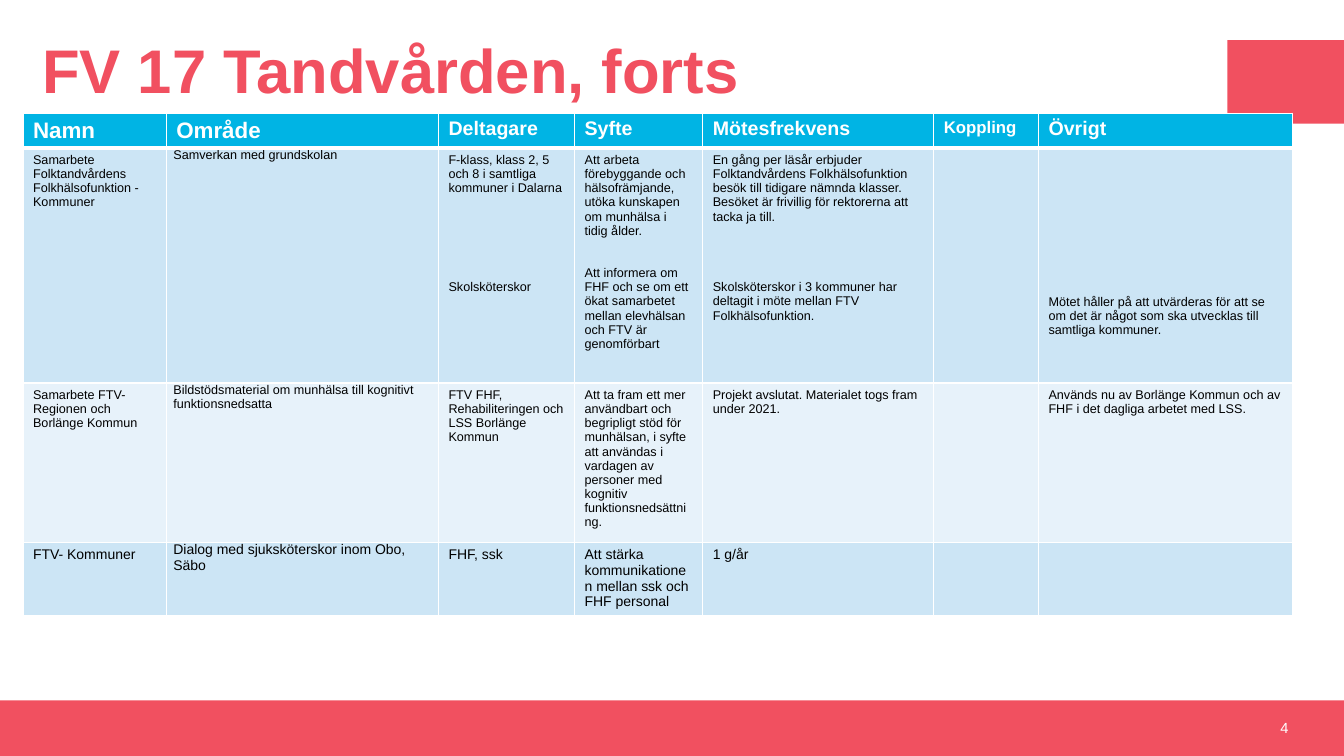
from lxml import etree
from pptx import Presentation
from pptx.dml.color import RGBColor
from pptx.enum.shapes import MSO_SHAPE
from pptx.enum.text import MSO_ANCHOR, MSO_AUTO_SIZE, PP_ALIGN
from pptx.oxml.ns import qn
from pptx.util import Cm, Pt

RECTANGLE = MSO_SHAPE.RECTANGLE
MIDDLE = MSO_ANCHOR.MIDDLE
NO_FIT = MSO_AUTO_SIZE.NONE
LEFT, RIGHT = PP_ALIGN.LEFT, PP_ALIGN.RIGHT

# Content
TITLE = "FV 17 Tandvården, forts"
PAGE_NUMBER = "4"
HEADERS = [("Namn", 16), ("Område", 16), ("Deltagare", 14), ("Syfte", 14),
           ("Mötesfrekvens", 14), ("Koppling", 12), ("Övrigt", 14)]
# Each cell lists (lines skipped above, text)
GROUPS = [
    [[(0, "Samarbete Folktandvårdens Folkhälsofunktion - Kommuner")],
     [(0, "Samverkan med grundskolan")],
     [(0, "F-klass, klass 2, 5 och 8 i samtliga kommuner i Dalarna"),
      (6, "Skolsköterskor")],
     [(0, "Att arbeta förebyggande och hälsofrämjande, utöka kunskapen om "
          "munhälsa i tidig ålder."),
      (2, "Att informera om FHF och se om ett ökat samarbetet mellan "
          "elevhälsan och FTV är genomförbart")],
     [(0, "En gång per läsår erbjuder Folktandvårdens Folkhälsofunktion besök "
          "till tidigare nämnda klasser. Besöket är frivillig för rektorerna "
          "att tacka ja till."),
      (4, "Skolsköterskor i 3 kommuner har deltagit i möte mellan FTV "
          "Folkhälsofunktion.")],
     [],
     [(10, "Mötet håller på att utvärderas för att se om det är något som ska "
           "utvecklas till samtliga kommuner.")]],
    [[(0, "Samarbete FTV- Regionen och Borlänge Kommun")],
     [(0, "Bildstödsmaterial om munhälsa till kognitivt funktionsnedsatta")],
     [(0, "FTV FHF, Rehabiliteringen och LSS Borlänge Kommun")],
     [(0, "Att ta fram ett mer användbart och begripligt stöd för munhälsan, i "
          "syfte att användas i vardagen av personer med kognitiv "
          "funktionsnedsättning.")],
     [(0, "Projekt avslutat. Materialet togs fram under 2021.")],
     [],
     [(0, "Används nu av Borlänge Kommun och av FHF i det dagliga arbetet med "
          "LSS.")]],
    [[(0, "FTV- Kommuner")],
     [(0, "Dialog med sjuksköterskor inom Obo, Säbo")],
     [(0, "FHF, ssk")],
     [(0, "Att stärka kommunikationen mellan ssk och FHF personal")],
     [(0, "1 g/år")],
     [], []],
]
GROUP_SIZES = [9, 9, 10]
AREA_COLUMN = 1

# Look
FONT = "Arial"
CORAL, WHITE, BLACK = "F15060", "FFFFFF", "000000"
HEADER_FILL = "00B4E4"
BANDS = ["CCE5F5", "E7F2FA"]
SLIDE_WIDTH, SLIDE_HEIGHT = 33.87, 19.05
FOOTER_TOP = 17.65
COLUMN_WIDTHS = [3.61, 6.86, 3.43, 3.23, 5.82, 2.64, 6.4]
ROW_HEIGHTS = [0.87, 5.92, 4.01, 1.84]
LINE_PITCH = Pt(10.1)
TOP_MARGIN = Cm(0.13)


def rgb(color):
    return RGBColor.from_string(color)


def style(paragraph, size, color, bold=False):
    font = paragraph.font
    font.name, font.size, font.bold = FONT, Pt(size), bold
    font.color.rgb = rgb(color)


def paint(cell, fill, top, bottom):
    """Fill a cell and draw its white borders, widths in points."""
    cell.fill.solid()
    cell.fill.fore_color.rgb = rgb(fill)
    properties = cell._tc.get_or_add_tcPr()
    sides = [("a:lnL", 1), ("a:lnR", 1), ("a:lnT", top), ("a:lnB", bottom)]
    for position, (side, width) in enumerate(sides):
        line = etree.Element(qn(side), w=str(Pt(width)))
        solid = etree.SubElement(line, qn("a:solidFill"))
        etree.SubElement(solid, qn("a:srgbClr"), val=WHITE)
        properties.insert(position, line)


presentation = Presentation()
presentation.slide_width = Cm(SLIDE_WIDTH)
presentation.slide_height = Cm(SLIDE_HEIGHT)
slide = presentation.slides.add_slide(presentation.slide_layouts[5])

# Coral footer band and corner block
for left, top, width, height in [
        (0, FOOTER_TOP, SLIDE_WIDTH, SLIDE_HEIGHT - FOOTER_TOP),
        (30.93, 1.01, 2.94, 2.11)]:
    block = slide.shapes.add_shape(RECTANGLE, Cm(left), Cm(top),
                                   Cm(width), Cm(height))
    block.shadow.inherit = False
    block.fill.solid()
    block.fill.fore_color.rgb = rgb(CORAL)
    block.line.fill.background()

# Title
title = slide.shapes.title
title.left, title.top, title.width, title.height = (
    Cm(0.81), Cm(0.18), Cm(29.49), Cm(3.35))
title.text_frame.text = TITLE
title.text_frame.auto_size = NO_FIT
title.text_frame.vertical_anchor = MIDDLE
heading = title.text_frame.paragraphs[0]
heading.alignment = LEFT
heading.line_spacing = 0.9
style(heading, 44, CORAL, bold=True)

# Table grid
table = slide.shapes.add_table(
    len(ROW_HEIGHTS), len(COLUMN_WIDTHS), Cm(0.58), Cm(2.85),
    Cm(sum(COLUMN_WIDTHS)), Cm(sum(ROW_HEIGHTS))).table
for column, width in zip(table.columns, COLUMN_WIDTHS):
    column.width = Cm(width)
for row, height in zip(table.rows, ROW_HEIGHTS):
    row.height = Cm(height)

# Header row
for column_index, (label, size) in enumerate(HEADERS):
    cell = table.cell(0, column_index)
    cell.text = label
    style(cell.text_frame.paragraphs[0], size, WHITE, bold=True)
    paint(cell, HEADER_FILL, top=1, bottom=3)

# Body rows
for row_index, (group, size) in enumerate(zip(GROUPS, GROUP_SIZES), start=1):
    for column_index, entries in enumerate(group):
        cell = table.cell(row_index, column_index)
        paint(cell, BANDS[(row_index - 1) % 2],
              top=3 if row_index == 1 else 1, bottom=1)
        cell.text = "\n".join(text for _, text in entries)
        for number, paragraph in enumerate(cell.text_frame.paragraphs):
            style(paragraph, size, BLACK)
            skipped = entries[number][0] if entries else 0
            if number:
                paragraph.space_before = skipped * LINE_PITCH
            elif skipped:
                cell.margin_top = TOP_MARGIN + skipped * LINE_PITCH
        if column_index == AREA_COLUMN:
            cell.margin_left = cell.margin_right = Cm(0.18)
            cell.margin_top = cell.margin_bottom = 0
            cell.text_frame.paragraphs[0].space_after = Pt(6)

# Page number
page_box = slide.shapes.add_textbox(Cm(25.1), Cm(FOOTER_TOP), Cm(7.62), Cm(1.37))
page_box.text_frame.word_wrap = True
page_box.text_frame.vertical_anchor = MIDDLE
page_box.text_frame.text = PAGE_NUMBER
page = page_box.text_frame.paragraphs[0]
page.alignment = RIGHT
style(page, 10.5, WHITE)

presentation.save("out.pptx")
